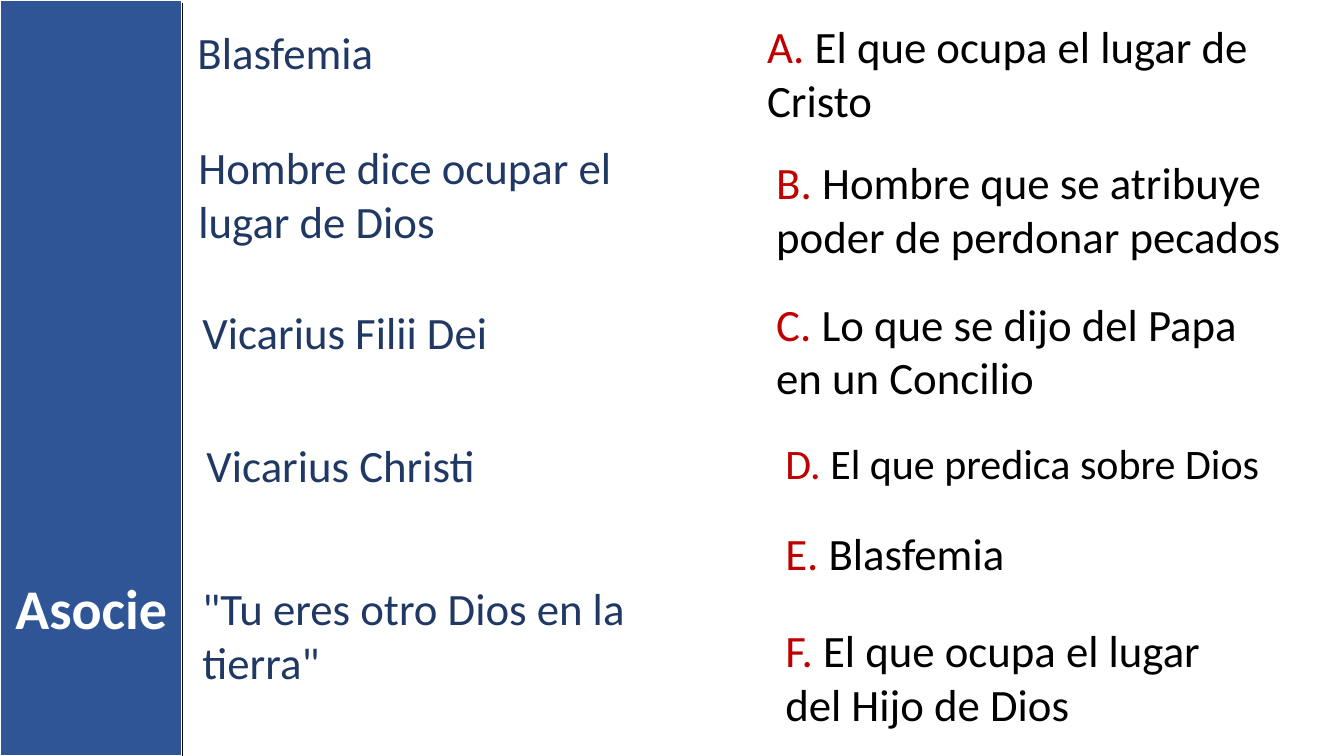
from lxml.etree import SubElement
from pptx import Presentation
from pptx.dml.color import RGBColor
from pptx.enum.shapes import MSO_CONNECTOR, MSO_SHAPE
from pptx.enum.text import MSO_ANCHOR, MSO_AUTO_SIZE, PP_ALIGN
from pptx.oxml.ns import qn
from pptx.util import Inches, Pt

TITLE = "Asocie"
TERMS = [
    ("Blasfemia", 1.86, 0.2, 5.11, 0.64),
    ("Hombre dice ocupar el lugar de Dios", 1.87, 1.34, 4.94, 1.18),
    ("Vicarius Filii Dei", 1.91, 2.97, 5.1, 0.64),
    ("Vicarius Christi", 1.95, 4.29, 4.94, 0.64),
    ('"Tu eres otro Dios en la tierra"', 1.91, 5.71, 4.77, 1.18),
]
ANSWERS = [
    ("El que ocupa el lugar de Cristo", 7.51, 0.14, 5.04, 1.18, 32),
    ("Hombre que se atribuye poder de perdonar pecados", 7.6, 1.49, 5.29, 1.18, 32),
    ("Lo que se dijo del Papa en un Concilio", 7.6, 2.89, 4.88, 1.18, 32),
    ("El que predica sobre Dios", 7.69, 4.29, 5.29, 0.61, 30),
    ("Blasfemia", 7.69, 5.17, 5.53, 0.64, 32),
    ("El que ocupa el lugar del Hijo de Dios", 7.69, 6.13, 4.97, 1.18, 32),
]
FONT = "Calibri"
BLUE = RGBColor(0x2F, 0x55, 0x97)
NAVY = RGBColor(0x20, 0x38, 0x64)
RED = RGBColor(0xC0, 0x00, 0x00)
BLACK = RGBColor(0x00, 0x00, 0x00)
WHITE = RGBColor(0xFF, 0xFF, 0xFF)
BAR_WIDTH = Inches(1.81)


def format_run(r, size, color, bold=False):
    """Apply the slide font to a run."""
    r.font.name = FONT
    r.font.size = Pt(size)
    r.font.color.rgb = color
    r.font.bold = bold


def add_text(slide, box, runs, size):
    """Add a wrapped text box made of (text, color) runs."""
    tf = slide.shapes.add_textbox(*map(Inches, box)).text_frame
    tf.word_wrap = True
    tf.auto_size = MSO_AUTO_SIZE.SHAPE_TO_FIT_TEXT
    for text, color in runs:
        r = tf.paragraphs[0].add_run()
        r.text = text
        format_run(r, size, color)


def add_sidebar(slide, height):
    """Draw the blue bar, its title and its edge line."""
    title = slide.shapes.title
    title.left, title.top = 0, Inches(5.64)
    title.width, title.height = BAR_WIDTH, Inches(0.77)
    tf = title.text_frame
    tf.text = TITLE
    tf.word_wrap = True
    tf.auto_size = MSO_AUTO_SIZE.NONE
    tf.vertical_anchor = MSO_ANCHOR.TOP
    p = tf.paragraphs[0]
    p.alignment = PP_ALIGN.CENTER
    format_run(p.runs[0], 40, WHITE, bold=True)

    bar = slide.shapes.add_shape(MSO_SHAPE.RECTANGLE, 0, 0, BAR_WIDTH, height)
    bar.shadow.inherit = False
    bar.fill.solid()
    bar.fill.fore_color.rgb = BLUE
    bar.line.color.rgb = WHITE
    bar.line.width = Pt(1.5)
    title._element.addprevious(bar._element)

    edge = slide.shapes.add_connector(
        MSO_CONNECTOR.STRAIGHT, BAR_WIDTH, Inches(0.03), BAR_WIDTH, height)
    edge.line.color.rgb = BLACK
    edge.line.width = Pt(1)
    SubElement(edge._element.spPr, qn("a:effectLst"))


def main():
    """Build the matching exercise slide."""
    prs = Presentation()
    prs.slide_width, prs.slide_height = Inches(13.33), Inches(7.5)
    slide = prs.slides.add_slide(prs.slide_layouts[5])
    add_sidebar(slide, prs.slide_height)
    for text, *box in TERMS:
        add_text(slide, box, [(text, NAVY)], 32)
    for letter, (text, *box, size) in zip("ABCDEF", ANSWERS):
        add_text(slide, box, [(f"{letter}. ", RED), (text, BLACK)], size)
    prs.save("out.pptx")


if __name__ == "__main__":
    main()
